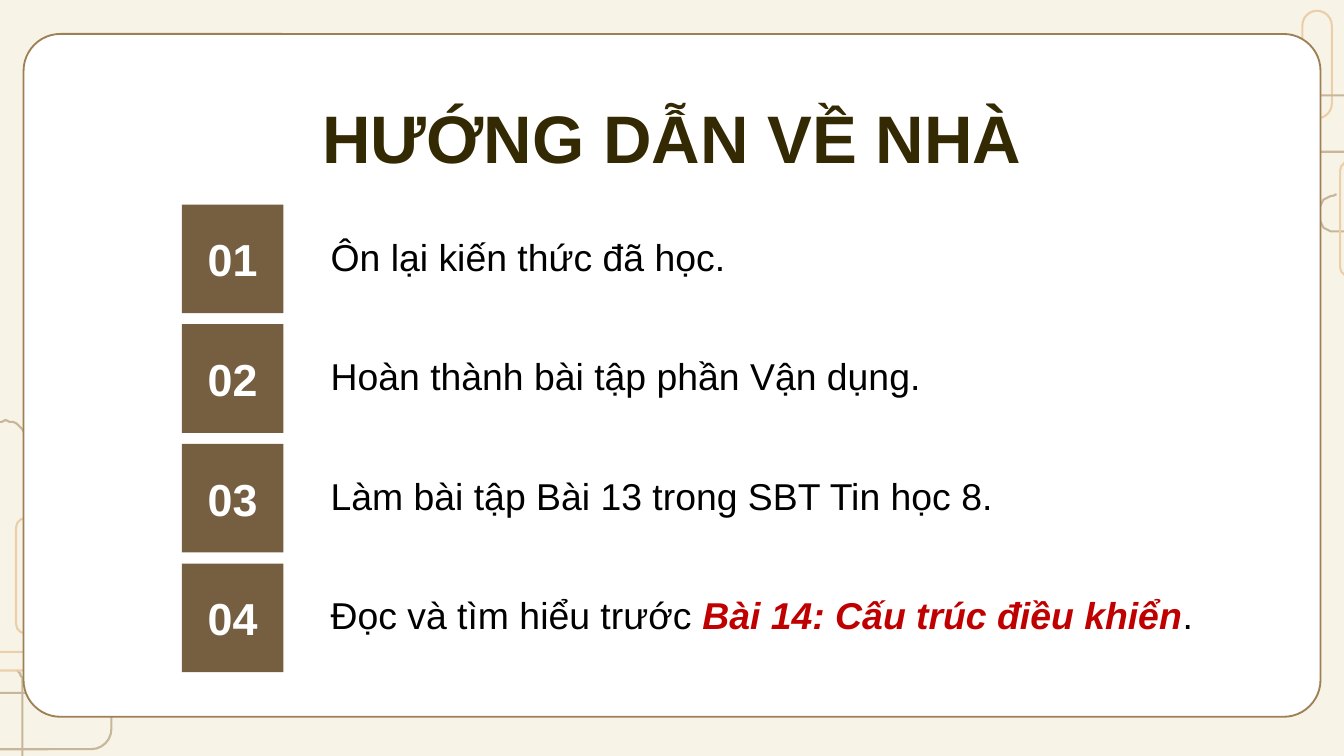
"""Build the homework slide: a title and four numbered tasks on a card."""
from math import cos, radians, sin

from lxml.etree import SubElement
from pptx import Presentation
from pptx.dml.color import RGBColor
from pptx.enum.shapes import MSO_SHAPE
from pptx.enum.text import MSO_ANCHOR, MSO_AUTO_SIZE, PP_ALIGN
from pptx.oxml.ns import qn
from pptx.util import Pt

CREAM = RGBColor(0xF7, 0xF4, 0xE7)
WHITE = RGBColor(0xFF, 0xFF, 0xFF)
BLACK = RGBColor(0x00, 0x00, 0x00)
TAN = RGBColor(0x9E, 0x7F, 0x56)
PEACH = RGBColor(0xE2, 0xAE, 0x74)
BROWN = RGBColor(0x76, 0x5F, 0x41)
OLIVE = RGBColor(0x33, 0x2A, 0x03)
RED = RGBColor(0xC0, 0x00, 0x00)

WIDE, HIGH = 720, 405
TOP, STEP = 109.6, 64.1

TASKS = [
    [("Ôn lại kiến thức đã học.", {})],
    [("Hoàn thành bài tập phần Vận dụng.", {})],
    [("Làm bài tập Bài 13 trong SBT Tin học 8.", {})],
    [
        ("Đọc và tìm hiểu trước ", {}),
        ("Bài 14: Cấu trúc điều khiển", {"color": RED, "bold": True, "italic": True}),
        (".", {}),
    ],
]

PILLS = [
    ((717.9, 86.4, 10, 61.7), 0.5, PEACH),
    ((697.7, 5.8, 15.8, 57.6), 0.5, PEACH),
    ((689, 51.1, 90.7, 30.2), 0.36, TAN),
    ((-31, 371.2, 90.7, 30.2), 0.36, TAN),
    ((-29.5, 349.2, 61.7, 10), 0.5, PEACH),
    ((8.6, 277.6, 10, 61.7), 0.5, PEACH),
]


def paint(shape, fill=None, line=None, weight=1):
    """Set the fill and line of a shape and drop its shadow."""
    shape.shadow.inherit = False
    if fill is None:
        shape.fill.background()
    else:
        shape.fill.solid()
        shape.fill.fore_color.rgb = fill
    if line is None:
        shape.line.fill.background()
    else:
        shape.line.color.rgb = line
        shape.line.width = Pt(weight)


def add_box(slide, kind, box, round_by=None, **look):
    """Add a preset shape at a box given in points."""
    shape = slide.shapes.add_shape(kind, *map(Pt, box))
    if round_by is not None:
        shape.adjustments[0] = round_by
    paint(shape, **look)
    return shape


def bend(x, y, size, start, end, count=16):
    """Return the points of an arc, with angles in degrees."""
    turns = [radians(start + (end - start) * i / count) for i in range(count + 1)]
    return [(x + size * cos(turn), y + size * sin(turn)) for turn in turns]


def add_hook(slide, dots):
    """Add an open tan outline through the points."""
    pen = slide.shapes.build_freeform(*dots[0], scale=Pt(1))
    pen.add_line_segments(dots[1:], close=False)
    paint(pen.convert_to_shape(), line=TAN, weight=1.12)


def write(par, text, size=20, color=BLACK, bold=False, italic=False):
    """Add a run of formatted text to a paragraph."""
    run = par.add_run()
    run.text = text
    font = run.font
    font.name, font.size = "Arial", Pt(size)
    font.bold, font.italic = bold, italic
    font.color.rgb = color


def set_frame(shape, anchor, align, spacing, inset=(7.2, 7.2)):
    """Prepare a text frame and return its first paragraph."""
    frame = shape.text_frame
    frame.word_wrap = True
    frame.auto_size = MSO_AUTO_SIZE.NONE
    frame.vertical_anchor = anchor
    frame.margin_left = frame.margin_right = Pt(inset[0])
    frame.margin_top = frame.margin_bottom = Pt(inset[1])
    par = frame.paragraphs[0]
    par.alignment, par.line_spacing = align, spacing
    par.space_before = Pt(0)
    return par


def place(shape, left, top, width, height):
    """Move a placeholder to a box in points, in front of the rest."""
    shape.left, shape.top = Pt(left), Pt(top)
    shape.width, shape.height = Pt(width), Pt(height)
    shape.element.getparent().append(shape.element)


def add_decor(slide):
    """Draw the faded outlines and the white card."""
    add_hook(slide, bend(716.4, 114.5, 10, 270, 90) + [(774, 124.5)])
    add_hook(slide, [(12.2, 443.5)] + bend(1.4, 366.5, 10.8, 0, -45))
    add_hook(slide, [(13.7, 278)] + bend(2.9, 236.2, 10.8, 0, -180) + [(-7.9, 313)])
    for box, curve, color in PILLS:
        add_box(slide, MSO_SHAPE.ROUNDED_RECTANGLE, box, curve, line=color, weight=1.12)
    veil = add_box(slide, MSO_SHAPE.RECTANGLE, (0, 0, WIDE, HIGH), fill=CREAM)
    tint = veil.element.spPr.find(qn("a:solidFill"))[0]
    SubElement(tint, qn("a:alpha")).set("val", "47000")
    add_box(slide, MSO_SHAPE.ROUNDED_RECTANGLE, (12.6, 18.2, 694.8, 365.8), 0.054,
            fill=WHITE, line=TAN)


def add_title(slide, text):
    """Fill the title placeholder."""
    title = slide.shapes.title
    place(title, 0, 38.9, WIDE, 46.8)
    par = set_frame(title, MSO_ANCHOR.MIDDLE, PP_ALIGN.CENTER, 1.5)
    write(par, text, size=36, color=OLIVE, bold=True)


def add_task(slide, body, rank, runs):
    """Add a numbered badge and fill the body placeholder next to it."""
    top = TOP + STEP * (rank - 1)
    badge = add_box(slide, MSO_SHAPE.RECTANGLE, (97.4, top, 54.4, 58.2), fill=BROWN)
    par = set_frame(badge, MSO_ANCHOR.MIDDLE, PP_ALIGN.CENTER, 1)
    write(par, f"{rank:02}", size=24, color=WHITE, bold=True)
    place(body, 169.9, top, 486, 43.9)
    par = set_frame(body, MSO_ANCHOR.TOP, PP_ALIGN.LEFT, 1.5, (7.2, 3.6))
    props = par._p.get_or_add_pPr()
    props.set("marL", "0")
    props.set("indent", "0")
    SubElement(props, qn("a:buNone"))
    for text, form in runs:
        write(par, text, **form)


def main():
    """Build and save the slide."""
    deck = Presentation()
    deck.slide_width, deck.slide_height = Pt(WIDE), Pt(HIGH)
    slide = deck.slides.add_slide(deck.slide_layouts.get_by_name("Comparison"))
    slide.background.fill.solid()
    slide.background.fill.fore_color.rgb = CREAM
    title, *bodies = slide.placeholders
    add_decor(slide)
    add_title(slide, "HƯỚNG DẪN VỀ NHÀ")
    for rank, (body, runs) in enumerate(zip(bodies, TASKS), 1):
        add_task(slide, body, rank, runs)
    deck.save("out.pptx")


if __name__ == "__main__":
    main()
